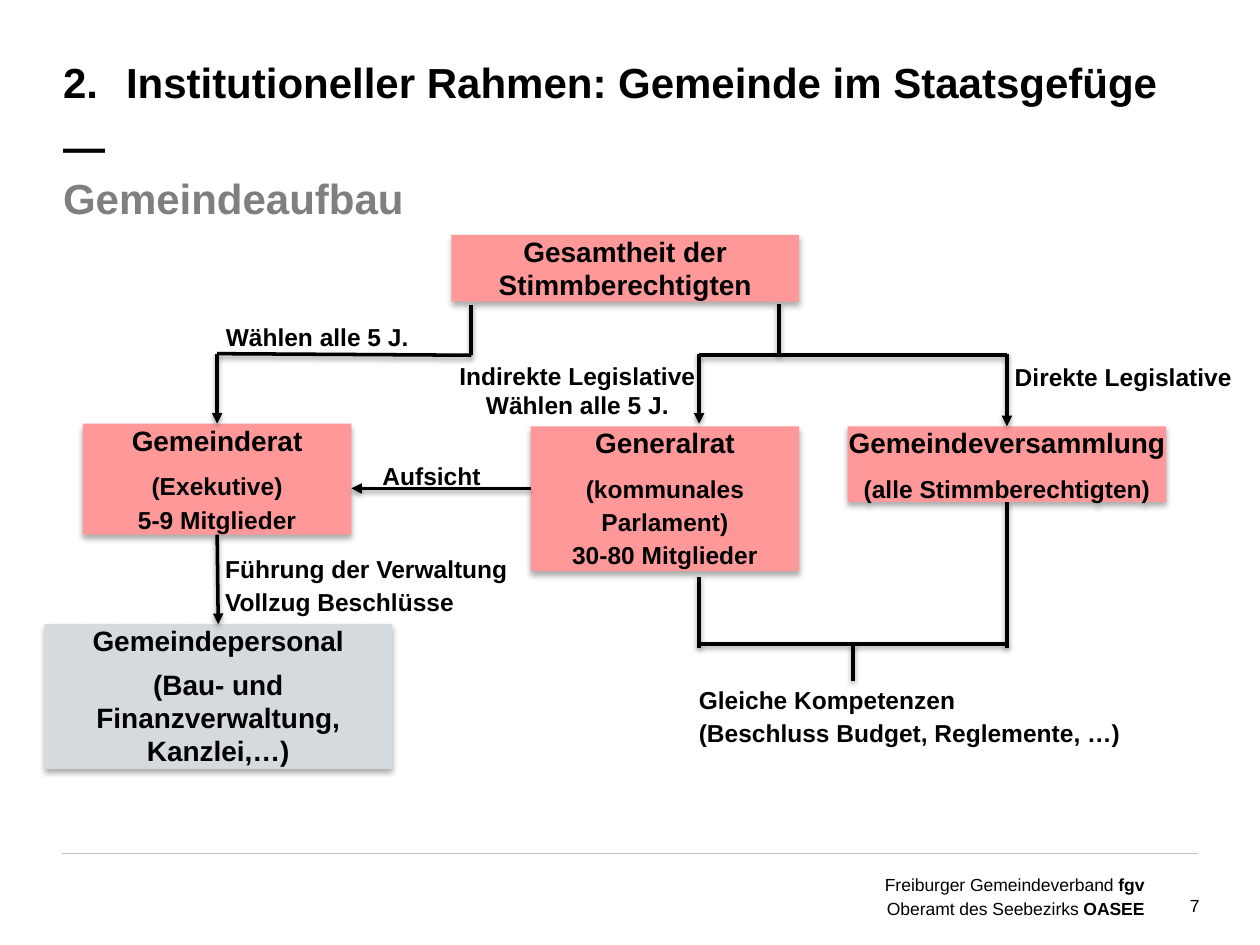
from typing import NamedTuple, Optional

from lxml.etree import SubElement
from pptx import Presentation
from pptx.dml.color import RGBColor
from pptx.enum.shapes import MSO_CONNECTOR as Conn, MSO_SHAPE as Shape
from pptx.enum.text import MSO_ANCHOR as Anchor, MSO_AUTO_SIZE as AutoSize
from pptx.enum.text import PP_ALIGN as Align
from pptx.oxml.ns import qn
from pptx.util import Pt

FONT = "Arial"
COLORS = {
    "black": "000000",
    "grey": "7F7F7F",
    "rule": "C0C0C0",
    "red": "FF9999",
    "pale": "D4DADE",
}
TOP, BOTTOM = 0, 2  # connection sites of a rectangle


class Para(NamedTuple):
    text: str
    size: float = 14
    bold: Optional[bool] = True
    color: str = "black"
    spacing: Optional[float] = 19
    after: float = 6


class Shadow(NamedTuple):
    alpha: int
    blur: float
    dist: float


class Box(NamedTuple):
    key: str
    left: float
    top: float
    width: float
    height: float
    paras: list[Para]
    fill: str = "red"


class Label(NamedTuple):
    left: float
    top: float
    width: float
    height: float
    para: Para
    align: Align = Align.CENTER


class Line(NamedTuple):
    x1: float
    y1: float
    x2: float
    y2: float
    arrow: bool = False
    begin: Optional[tuple[str, int]] = None
    end: Optional[tuple[str, int]] = None


BOX_SHADOW = Shadow(32, 3.5, 2.2)
LINE_SHADOW = Shadow(38, 3.1, 1.6)


def rgb(name: str) -> RGBColor:
    return RGBColor.from_string(COLORS[name])


def add_shadow(sp, shadow: Shadow) -> None:
    effects = SubElement(sp._element.spPr, qn("a:effectLst"))
    outer = SubElement(effects, qn("a:outerShdw"), blurRad=str(Pt(shadow.blur)),
                       dist=str(Pt(shadow.dist)), dir="5400000", rotWithShape="0")
    color = SubElement(outer, qn("a:srgbClr"), val=COLORS["black"])
    SubElement(color, qn("a:alpha"), val=str(shadow.alpha * 1000))


def prepare_frame(tf) -> None:
    tf.margin_left = tf.margin_right = tf.margin_top = tf.margin_bottom = 0
    tf.word_wrap = True
    tf.auto_size = AutoSize.NONE
    tf.vertical_anchor = Anchor.TOP


def write(tf, paras: list[Para], align: Align, tab: Optional[float] = None) -> None:
    prepare_frame(tf)
    for i, para in enumerate(paras):
        p = tf.paragraphs[0] if i == 0 else tf.add_paragraph()
        p.text = para.text
        p.alignment = align
        p.space_after = Pt(para.after)
        if para.spacing:
            p.line_spacing = Pt(para.spacing)
        if tab:
            tabs = SubElement(p._p.get_or_add_pPr(), qn("a:tabLst"))
            SubElement(tabs, qn("a:tab"), pos=str(Pt(tab)), algn="l")
        p.font.name, p.font.size, p.font.bold = FONT, Pt(para.size), para.bold
        p.font.color.rgb = rgb(para.color)


def add_box(s, box: Box):
    sp = s.shapes.add_shape(Shape.RECTANGLE, Pt(box.left), Pt(box.top),
                            Pt(box.width), Pt(box.height))
    # Without the theme style no white text colour is inherited
    sp._element.remove(sp._element.find(qn("p:style")))
    sp.fill.solid()
    sp.fill.fore_color.rgb = rgb(box.fill)
    sp.line.fill.background()
    add_shadow(sp, BOX_SHADOW)
    write(sp.text_frame, box.paras, Align.CENTER)
    return sp


def add_label(s, label: Label) -> None:
    sp = s.shapes.add_textbox(Pt(label.left), Pt(label.top), Pt(label.width), Pt(label.height))
    write(sp.text_frame, [label.para], label.align)


def add_line(s, line: Line, boxes: dict) -> None:
    cx = s.shapes.add_connector(Conn.STRAIGHT, Pt(line.x1), Pt(line.y1),
                                Pt(line.x2), Pt(line.y2))
    if line.begin:
        cx.begin_connect(boxes[line.begin[0]], line.begin[1])
    if line.end:
        cx.end_connect(boxes[line.end[0]], line.end[1])
    cx.line.color.rgb = rgb("black")
    cx.line.width = Pt(2)
    if line.arrow:
        SubElement(cx.line._get_or_add_ln(), qn("a:tailEnd"), type="triangle")
    add_shadow(cx, LINE_SHADOW)


def add_footer(s) -> None:
    rule = s.shapes.add_connector(Conn.STRAIGHT, Pt(35.5), Pt(487.4), Pt(684.5), Pt(487.4))
    rule.line.color.rgb = rgb("rule")
    rule.line.width = Pt(0.25)
    SubElement(rule._element.spPr, qn("a:effectLst"))
    tf = s.shapes.add_textbox(Pt(497.7), Pt(498.2), Pt(156.3), Pt(25.2)).text_frame
    owners = [("Freiburger Gemeindeverband ", "fgv"), ("Oberamt des Seebezirks ", "OASEE")]
    write(tf, [Para(name, 10, None, spacing=13.4, after=0) for name, _ in owners], Align.RIGHT)
    for p, (_, short) in zip(tf.paragraphs, owners):
        r = p.add_run()
        r.text = short
        r.font.bold = True
    add_label(s, Label(653.8, 511.2, 31.7, 12.2, Para("7", 10, False, spacing=None, after=0),
                       Align.RIGHT))


# Chart columns and levels
COUNCIL_X, PARLIAMENT_X, ASSEMBLY_X = 124.1, 399.5, 575.4
MIDDLE_X = (PARLIAMENT_X + ASSEMBLY_X) / 2
VOTERS_LEFT, VOTERS_RIGHT = 269.3, 445.2
SPLIT_Y, ARROW_Y, JOIN_Y = 203, 242.1, 367.9

BOXES = [
    Box("voters", 257.9, 134.2, 198.7, 38.2,
        [Para("Gesamtheit der Stimmberechtigten", 16)]),
    Box("assembly", 484.4, 243.6, 182, 43.2,
        [Para("Gemeindeversammlung", 16), Para("(alle Stimmberechtigten)")]),
    Box("parliament", 303.3, 243.6, 153.4, 82.8,
        [Para("Generalrat", 16), Para("(kommunales Parlament)\n30-80 Mitglieder")]),
    Box("council", 47.4, 242.1, 153.4, 63.4,
        [Para("Gemeinderat", 16), Para("(Exekutive)\n5-9 Mitglieder")]),
    Box("staff", 25.4, 356.6, 198.7, 82.8,
        [Para("Gemeindepersonal", 16),
         Para("(Bau- und Finanzverwaltung, Kanzlei,…)", 16)], "pale"),
]
LINES = [
    Line(COUNCIL_X, 202.1, VOTERS_LEFT, SPLIT_Y),
    Line(VOTERS_LEFT, 174.2, VOTERS_LEFT, SPLIT_Y),
    Line(VOTERS_RIGHT, 173.5, VOTERS_RIGHT, SPLIT_Y),
    Line(PARLIAMENT_X, SPLIT_Y, ASSEMBLY_X, SPLIT_Y),
    Line(303.3, 279.1, 200.8, 279.1, True),
    Line(COUNCIL_X, 202.1, COUNCIL_X, ARROW_Y, True, end=("council", TOP)),
    Line(PARLIAMENT_X, 202.1, PARLIAMENT_X, ARROW_Y, True),
    Line(ASSEMBLY_X, 202.1, ASSEMBLY_X, ARROW_Y, True, end=("assembly", TOP)),
    Line(PARLIAMENT_X, 329.8, PARLIAMENT_X, 370.1),
    Line(ASSEMBLY_X, 285.1, ASSEMBLY_X, 370.1, begin=("assembly", BOTTOM)),
    Line(PARLIAMENT_X, JOIN_Y, ASSEMBLY_X, JOIN_Y),
    Line(MIDDLE_X, JOIN_Y, MIDDLE_X, 389),
    Line(COUNCIL_X, 305.5, COUNCIL_X, 356.6, True, ("council", BOTTOM), ("staff", TOP)),
]
LABELS = [
    Label(36, 98.6, 648.7, 28.8, Para("Gemeindeaufbau", 24, color="grey", spacing=None), Align.LEFT),
    Label(119, 181.8, 124.6, 17.3, Para("Wählen alle 5 J.")),
    Label(254, 206.2, 151.9, 33.8, Para("Indirekte Legislative\nWählen alle 5 J.", spacing=None)),
    Label(579.6, 204.8, 124.6, 17.3, Para("Direkte Legislative")),
    Label(184.3, 261.4, 124.6, 17.3, Para("Aufsicht")),
    Label(128.7, 314.4, 163.4, 36.7, Para("Führung der Verwaltung\nVollzug Beschlüsse"), Align.LEFT),
    Label(399.3, 389.2, 244.1, 36.7,
          Para("Gleiche Kompetenzen\n(Beschluss Budget, Reglemente, …)"), Align.LEFT),
]


def main() -> None:
    prs = Presentation()
    prs.slide_width, prs.slide_height = Pt(720), Pt(540)
    s = prs.slides.add_slide(prs.slide_layouts[5])

    # Title
    title = s.shapes.title
    title.left, title.top, title.width, title.height = Pt(36), Pt(23.8), Pt(648.7), Pt(70.6)
    heading = "2.\tInstitutioneller Rahmen: Gemeinde im Staatsgefüge\n—"
    write(title.text_frame, [Para(heading, 24, spacing=37, after=0)], Align.LEFT, tab=36)

    # Organisation chart
    boxes = {box.key: add_box(s, box) for box in BOXES}
    for line in LINES:
        add_line(s, line, boxes)
    for label in LABELS:
        add_label(s, label)

    add_footer(s)
    prs.save("out.pptx")


if __name__ == "__main__":
    main()
